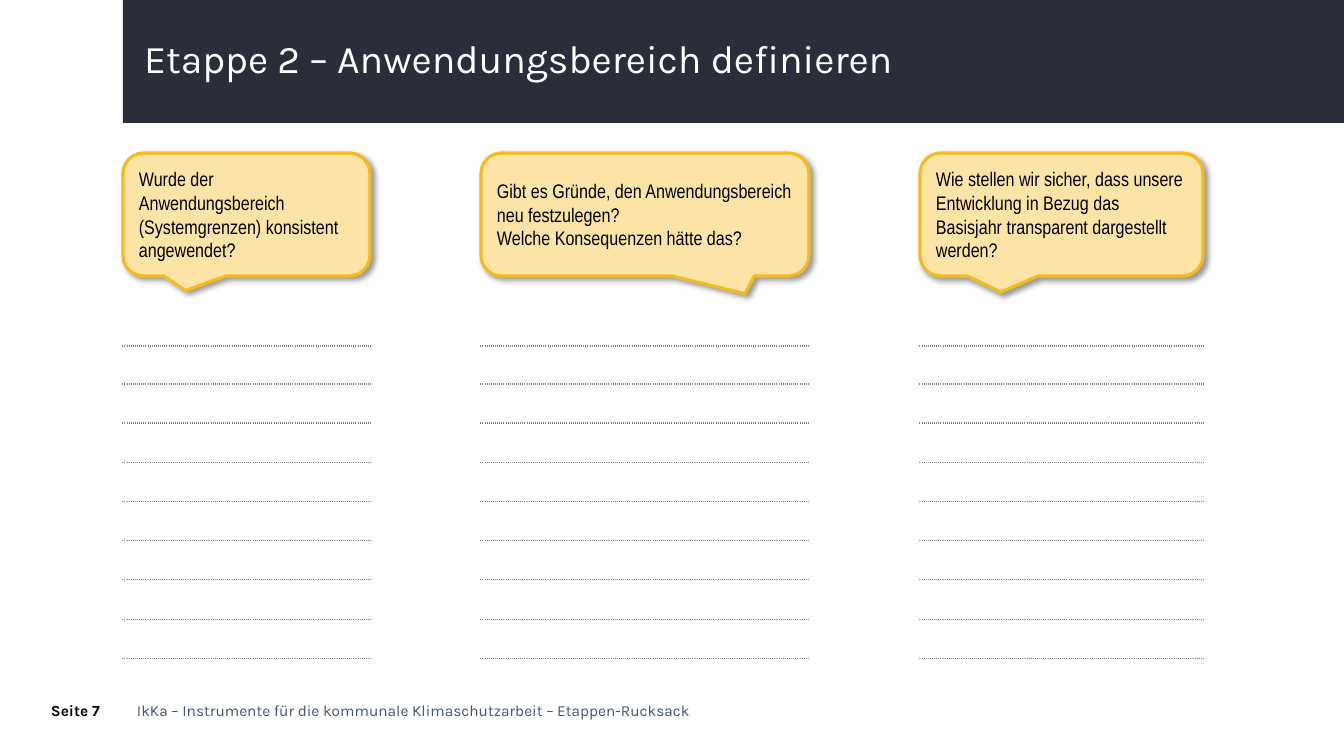
from lxml import etree
from pptx import Presentation
from pptx.dml.color import RGBColor
from pptx.enum.shapes import MSO_SHAPE as Shape
from pptx.enum.text import MSO_ANCHOR as Anchor, PP_ALIGN as Align
from pptx.oxml import parse_xml
from pptx.oxml.ns import nsdecls, qn
from pptx.util import Emu, Pt

EMU_PER_PX = 914400 / 100.8
NAVY, WHITE, BLACK, SLATE = "2A2E3B", "FFFFFF", "000000", "44546A"
AMBER, CREAM, GREY = "F7BA1C", "FCE3A6", "808080"
ROW_HEIGHTS = [38, 38, 39, 40, 39, 39, 39, 40, 39]

# left, width, callout adjustments, paragraphs
QUESTIONS = [
    (123, 247, (-0.246, 0.62, 0.167),
     ["Wurde der Anwendungsbereich (Systemgrenzen) konsistent angewendet?"]),
    (481, 328, (0.305, 0.645, 0.167),
     ["Gibt es Gründe, den Anwendungsbereich neu festzulegen?",
      "Welche Konsequenzen hätte das?"]),
    (920, 283, (-0.214, 0.631, 0.167),
     ["Wie stellen wir sicher, dass unsere Entwicklung in Bezug das "
      "Basisjahr transparent dargestellt werden?"]),
]


def px(length):
    return Emu(round(length * EMU_PER_PX))


def box(*lengths):
    return [px(length) for length in lengths]


def color(hex_value):
    return RGBColor.from_string(hex_value)


def write(frame, texts, font, size, hex_value, bold=False, spacing=None):
    frame.word_wrap = True
    for index, text in enumerate(texts):
        paragraph = frame.add_paragraph() if index else frame.paragraphs[0]
        paragraph.alignment = Align.LEFT
        if spacing:
            paragraph.line_spacing = spacing
        run = paragraph.add_run()
        run.text = text
        run.font.name = font
        run.font.size = Pt(size)
        run.font.bold = bold
        run.font.color.rgb = color(hex_value)


def add_label(slide, place, text, size, hex_value, inset=0, **style):
    frame = slide.shapes.add_textbox(*box(*place)).text_frame
    frame.margin_left = frame.margin_right = px(inset)
    frame.margin_top = frame.margin_bottom = px(inset // 2)
    write(frame, [text], "Karla", size, hex_value, **style)


def add_filled(slide, kind, place, fill):
    shape = slide.shapes.add_shape(kind, *box(*place))
    shape.shadow.inherit = False
    shape.fill.solid()
    shape.fill.fore_color.rgb = color(fill)
    shape.line.fill.background()
    return shape


def add_callout(slide, left, width, adjustments, texts):
    shape = add_filled(slide, Shape.ROUNDED_RECTANGULAR_CALLOUT,
                       (left, 153, width, 123), CREAM)
    for index, value in enumerate(adjustments):
        shape.adjustments[index] = value
    shape.line.color.rgb = color(AMBER)
    shape.line.width = Pt(2.25)
    effects = shape.element.spPr.find(qn("a:effectLst"))
    effects.append(parse_xml(
        f'<a:outerShdw {nsdecls("a")} blurRad="{Pt(4)}" dist="{Pt(3)}" '
        f'dir="2700000" algn="tl" rotWithShape="0"><a:srgbClr val="{BLACK}">'
        '<a:alpha val="40000"/></a:srgbClr></a:outerShdw>'))
    shape.text_frame.vertical_anchor = Anchor.MIDDLE
    write(shape.text_frame, texts, "Arial Narrow", 14, BLACK)


def add_border(cell, side):
    """Draw a dotted grey border on one side ("T" or "B") of a cell."""
    line = etree.SubElement(cell._tc.get_or_add_tcPr(), qn(f"a:ln{side}"), w=str(Pt(1)))
    fill = etree.SubElement(line, qn("a:solidFill"))
    etree.SubElement(fill, qn("a:srgbClr"), val=GREY)
    etree.SubElement(line, qn("a:prstDash"), val="sysDot")


def add_answer_lines(slide, left, width):
    """Add a one-column table whose dotted row borders are writing lines."""
    place = box(left, 308, width, sum(ROW_HEIGHTS))
    table = slide.shapes.add_table(len(ROW_HEIGHTS), 1, *place).table
    table.first_row = table.horz_banding = False
    for index, height in enumerate(ROW_HEIGHTS):
        table.rows[index].height = px(height)
        cell = table.cell(index, 0)
        cell.margin_top = cell.margin_bottom = 0
        if index:
            add_border(cell, "T")
        add_border(cell, "B")
        cell.fill.background()


def main():
    presentation = Presentation()
    presentation.slide_width, presentation.slide_height = box(1344, 756)
    slide = presentation.slides.add_slide(presentation.slide_layouts[6])

    add_filled(slide, Shape.RECTANGLE, (123, 0, 1221, 123), NAVY)
    add_label(slide, (137, 701, 561, 19),
              "IkKa – Instrumente für die kommunale Klimaschutzarbeit – Etappen-Rucksack",
              11, SLATE)
    add_label(slide, (134, 35, 1159, 61), "Etappe 2 – Anwendungsbereich definieren",
              28, WHITE, inset=10, spacing=0.9)
    add_label(slide, (51, 701, 74, 24), "Seite 7", 11, BLACK, bold=True)

    for left, width, adjustments, texts in QUESTIONS:
        add_callout(slide, left, width, adjustments, texts)
        add_answer_lines(slide, left, width)

    presentation.save("out.pptx")


if __name__ == "__main__":
    main()
